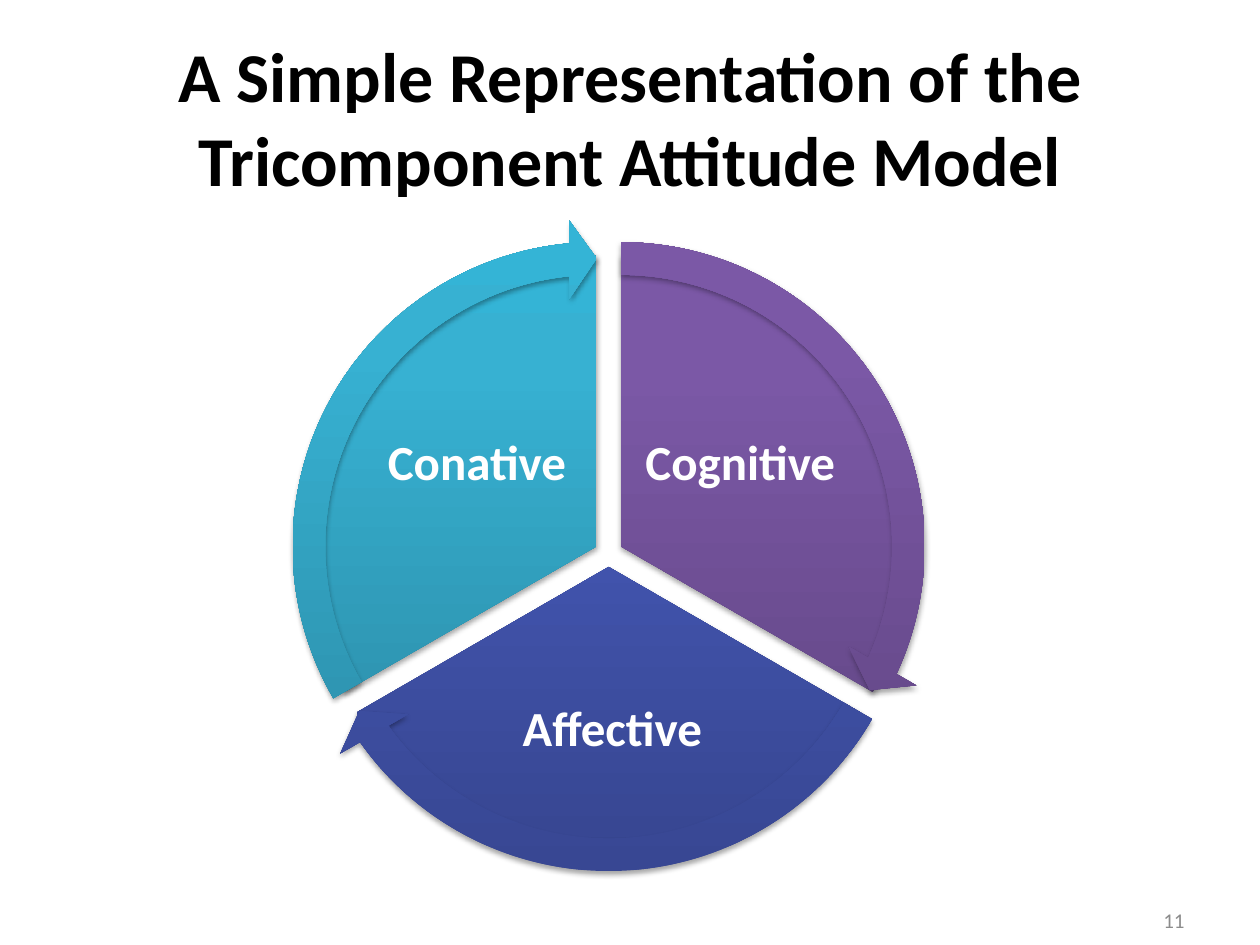
from copy import deepcopy
from math import cos, radians, sin
from typing import NamedTuple

from lxml import etree
from pptx import Presentation
from pptx.dml.color import RGBColor
from pptx.enum.shapes import MSO_SHAPE
from pptx.enum.text import MSO_ANCHOR, PP_ALIGN
from pptx.oxml.ns import qn
from pptx.util import Pt

PIE, ARROW = MSO_SHAPE.PIE, MSO_SHAPE.CIRCULAR_ARROW
MIDDLE = MSO_ANCHOR.MIDDLE
CENTER, RIGHT = PP_ALIGN.CENTER, PP_ALIGN.RIGHT

COLORS = {"title": "000000", "label": "FFFFFF", "number": "8C8C8C", "shadow": "000000"}
HUB_X, HUB_Y, GAP = 347.8, 316.1, 7.9
PIE_SIZE, ARROW_SIZE = 332.6, 373.7
ADJUST_PER_DEGREE = 0.6
HEAD_ANGLE = 5.46
STOP_POSITIONS = (0, 0.8, 1)


class Area(NamedTuple):
    left: float
    top: float
    width: float
    height: float


class Style(NamedTuple):
    size: float
    color: str
    bold: bool = True
    align: PP_ALIGN = CENTER
    inset_x: float = 7.2
    inset_y: float = 3.6
    spacing: float = 1


class Sector(NamedTuple):
    label: str
    bisector: float
    label_area: Area
    gradient: tuple[str, str, str]


TITLE = Style(40, "title")
LABEL = Style(28, "label", inset_x=2.9, inset_y=2.9, spacing=0.9)
NUMBER = Style(12, "number", bold=False, align=RIGHT)

SECTORS = (
    Sector("Cognitive", -30, Area(363.6, 216, 118.8, 98.6), ("5F4480", "7B58A6", "7C57A8")),
    Sector("Affective", 90, Area(260.6, 373.7, 178.6, 87.1), ("374691", "475BBC", "455ABF")),
    Sector("Conative", 210, Area(213.1, 216, 118.8, 98.6), ("2A88A2", "37B1D2", "34B4D6")),
)


def add_text(shapes, text: str, area: Area, style: Style) -> None:
    box = shapes.add_textbox(*map(Pt, area))
    frame = box.text_frame
    frame.word_wrap = True
    frame.vertical_anchor = MIDDLE
    frame.margin_left = frame.margin_right = Pt(style.inset_x)
    frame.margin_top = frame.margin_bottom = Pt(style.inset_y)
    para = frame.paragraphs[0]
    para.alignment = style.align
    para.line_spacing = style.spacing
    span = para.add_run()
    span.text = text
    span.font.name = "Calibri"
    span.font.size = Pt(style.size)
    span.font.bold = style.bold
    span.font.color.rgb = RGBColor.from_string(COLORS[style.color])


def add_shadow(shape) -> None:
    shape.shadow.inherit = False
    effects = shape._element.spPr.find(qn("a:effectLst"))
    shadow = etree.SubElement(
        effects, qn("a:outerShdw"), blurRad=str(Pt(3.1)), dist=str(Pt(1.8)),
        dir="5400000", rotWithShape="0",
    )
    color = etree.SubElement(shadow, qn("a:srgbClr"), val=COLORS["shadow"])
    etree.SubElement(color, qn("a:alpha"), val="35000")


def fill_gradient(shape, colors: tuple[str, str, str]) -> None:
    shape.fill.gradient()
    shape.fill.gradient_angle = 90
    stop_list = shape._element.spPr.find(qn("a:gradFill")).find(qn("a:gsLst"))
    stop_list.append(deepcopy(stop_list[-1]))
    for stop, position, color in zip(shape.fill.gradient_stops, STOP_POSITIONS, colors):
        stop.position = position
        stop.color.rgb = RGBColor.from_string(color)


def add_round(shapes, kind: MSO_SHAPE, size: float, sector: Sector, adjustments: tuple) -> None:
    angle = radians(sector.bisector)
    left = HUB_X + GAP * cos(angle) - size / 2
    top = HUB_Y + GAP * sin(angle) - size / 2
    shape = shapes.add_shape(kind, Pt(left), Pt(top), Pt(size), Pt(size))
    for index, value in enumerate(adjustments):
        shape.adjustments[index] = value
    fill_gradient(shape, sector.gradient)
    shape.line.fill.background()
    add_shadow(shape)


def add_pie(shapes, sector: Sector) -> None:
    start, end = ((sector.bisector + turn) % 360 for turn in (-60, 60))
    adjustments = (start * ADJUST_PER_DEGREE, end * ADJUST_PER_DEGREE)
    add_round(shapes, PIE, PIE_SIZE, sector, adjustments)


def add_arrow(shapes, sector: Sector) -> None:
    start = (sector.bisector - 60) % 360
    end = (sector.bisector + 60 - HEAD_ANGLE) % 360
    angles = (angle * ADJUST_PER_DEGREE for angle in (HEAD_ANGLE, end, start))
    add_round(shapes, ARROW, ARROW_SIZE, sector, (0.05, *angles, 0.06))


def main() -> None:
    """Build the tricomponent attitude model slide."""
    deck = Presentation()
    deck.slide_width, deck.slide_height = Pt(720), Pt(540)
    page = deck.slides.add_slide(deck.slide_layouts[6])
    add_text(page.shapes, "A Simple Representation of the Tricomponent Attitude Model",
             Area(36, 21.6, 648, 90), TITLE)
    add_text(page.shapes, "11", Area(516, 511, 168, 29), NUMBER)
    cycle = page.shapes.add_group_shape().shapes
    for sector in SECTORS:
        add_pie(cycle, sector)
        add_text(cycle, sector.label, sector.label_area, LABEL)
    for sector in SECTORS:
        add_arrow(cycle, sector)
    deck.save("out.pptx")


if __name__ == "__main__":
    main()
